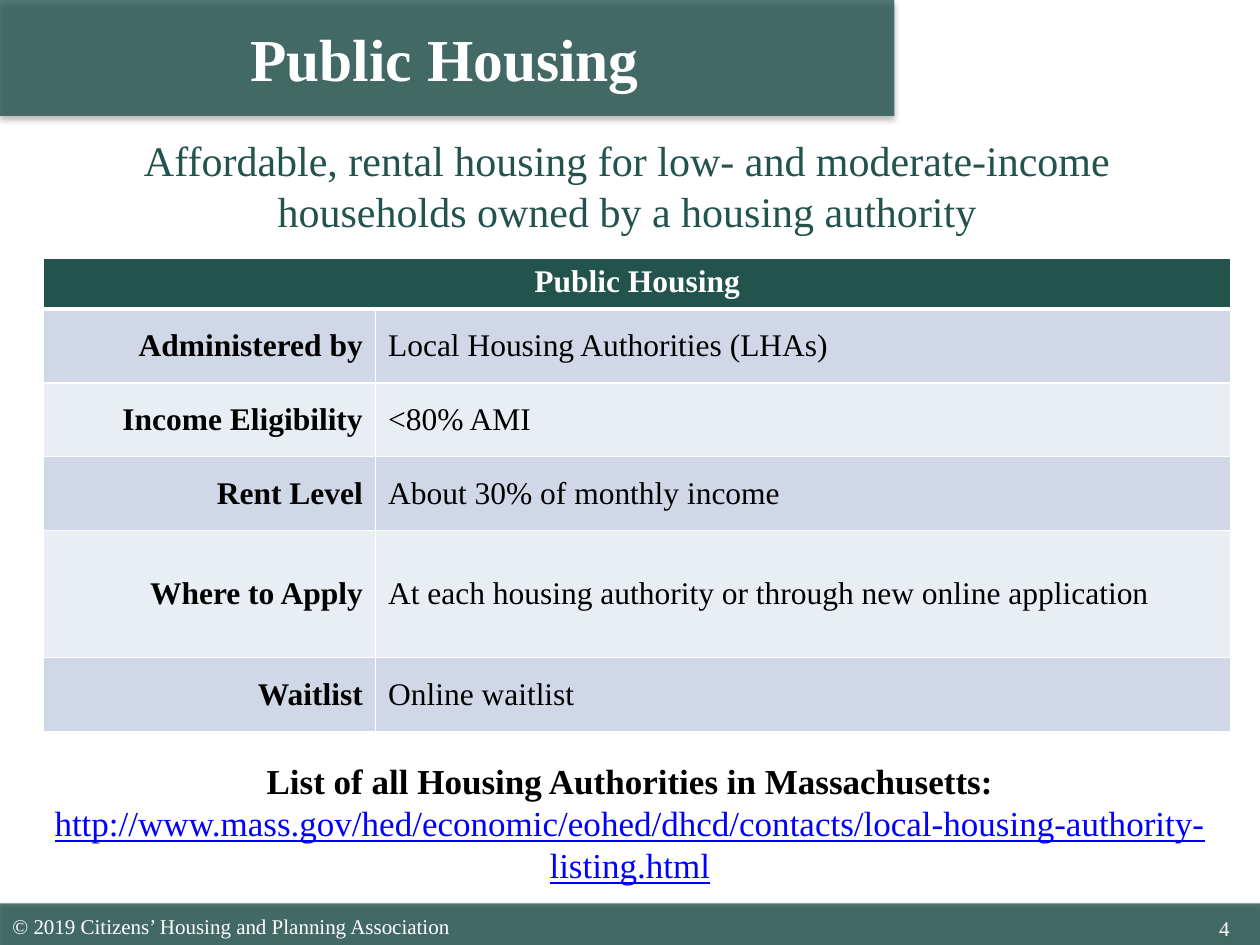
from lxml.etree import SubElement
from pptx import Presentation
from pptx.dml.color import RGBColor
from pptx.enum.shapes import MSO_SHAPE as Shape
from pptx.enum.text import MSO_ANCHOR as Anchor, PP_ALIGN as Align
from pptx.oxml.ns import qn
from pptx.util import Cm, Pt

FONT = "Times New Roman"
GREEN = RGBColor(0x22, 0x53, 0x4D)
WHITE = RGBColor(0xFF, 0xFF, 0xFF)
BLACK = RGBColor(0, 0, 0)
BLUE = RGBColor(0, 0, 0xFF)
BANDS = [RGBColor(0xD0, 0xD8, 0xE8), RGBColor(0xE9, 0xED, 0xF4)]

TITLE = "Public Housing"
SUBTITLE = ("Affordable, rental housing for low- and moderate-income "
            "households owned by a housing authority")
FACTS = [
    ("Administered by", "Local Housing Authorities (LHAs)"),
    ("Income Eligibility", "<80% AMI"),
    ("Rent Level", "About 30% of monthly income"),
    ("Where to Apply", "At each housing authority or through new online application"),
    ("Waitlist", "Online waitlist"),
]
LIST_LABEL = "List of all Housing Authorities in Massachusetts:"
LIST_ADDRESS = ("http://www.mass.gov/hed/economic/eohed/dhcd/contacts/"
                "local-housing-authority-listing.html")
COPYRIGHT = "© 2019 Citizens’ Housing and Planning Association"
PAGE_NUMBER = "4"

COLUMN_WIDTHS = [6.7, 17.25]
HEADER_HEIGHT, ROW_HEIGHT, TALL_ROW_HEIGHT = 0.98, 1.49, 2.56
TALL_ROW = 4


def add_shadow(properties):
    effects = properties.find(qn("a:effectLst"))
    if effects is None:
        effects = SubElement(properties, qn("a:effectLst"))
    shadow = SubElement(effects, qn("a:outerShdw"), blurRad=str(Pt(3.1)),
                        dist=str(Pt(1.8)), dir="5400000", rotWithShape="0")
    color = SubElement(shadow, qn("a:srgbClr"), val="000000")
    SubElement(color, qn("a:alpha"), val="35000")


def add_bar(page, top, width, height):
    bar = page.shapes.add_shape(Shape.RECTANGLE, 0, Cm(top), Cm(width), Cm(height))
    bar.shadow.inherit = False
    bar.fill.solid()
    bar.fill.fore_color.rgb = GREEN
    bar.line.fill.background()
    properties = bar.element.spPr
    color = properties.find(qn("a:solidFill")).find(qn("a:srgbClr"))
    SubElement(color, qn("a:alpha"), val="78000")
    add_shadow(properties)
    return bar


def set_insets(frame, left, right):
    frame.margin_left, frame.margin_right = Cm(left), Cm(right)
    frame.margin_top = frame.margin_bottom = 0


def add_box(page, left, top, width, height, anchor=Anchor.MIDDLE):
    box = page.shapes.add_textbox(Cm(left), Cm(top), Cm(width), Cm(height))
    frame = box.text_frame
    frame.word_wrap = True
    frame.vertical_anchor = anchor
    return frame


def write(para, text, size, color, align=Align.LEFT, bold=False, underline=False):
    span = para.add_run()
    span.text = text
    para.alignment = align
    font = para.font
    font.name, font.size, font.bold = FONT, Pt(size), bold
    font.underline = underline
    font.color.rgb = color
    return span


def style_cell(cell, fill, top=1, bottom=1):
    properties = cell._tc.get_or_add_tcPr()
    for side, width in (("L", 1), ("R", 1), ("T", top), ("B", bottom)):
        border = SubElement(properties, qn(f"a:ln{side}"), w=str(Pt(width)))
        paint = SubElement(border, qn("a:solidFill"))
        SubElement(paint, qn("a:srgbClr"), val=str(WHITE))
    cell.fill.solid()
    cell.fill.fore_color.rgb = fill


def add_facts(page):
    heights = [HEADER_HEIGHT] + [ROW_HEIGHT] * len(FACTS)
    heights[TALL_ROW] = TALL_ROW_HEIGHT
    table = page.shapes.add_table(len(heights), 2, Cm(0.87), Cm(5.21),
                                  Cm(sum(COLUMN_WIDTHS)), Cm(sum(heights))).table
    for column, width in zip(table.columns, COLUMN_WIDTHS):
        column.width = Cm(width)
    for row, height in zip(table.rows, heights):
        row.height = Cm(height)

    header = table.cell(0, 0)
    header.merge(table.cell(0, 1))
    for column in range(2):
        style_cell(table.cell(0, column), GREEN, bottom=3)
    write(header.text_frame.paragraphs[0], TITLE, 18, WHITE, Align.CENTER, bold=True)

    for index, fact in enumerate(FACTS, start=1):
        for column, text in enumerate(fact):
            cell = table.cell(index, column)
            style_cell(cell, BANDS[(index - 1) % 2], top=3 if index == 1 else 1)
            cell.vertical_anchor = Anchor.MIDDLE
            is_label = column == 0
            write(cell.text_frame.paragraphs[0], text, 18, BLACK,
                  Align.RIGHT if is_label else Align.LEFT, bold=is_label)


def main():
    deck = Presentation()
    deck.slide_width, deck.slide_height = Cm(25.4), Cm(19.05)
    page = deck.slides.add_slide(deck.slide_layouts[6])

    add_bar(page, 0, 18.03, 2.34)
    footer = add_bar(page, 18.21, 25.4, 0.84).text_frame
    set_insets(footer, 0.5, 0.61)
    footer.vertical_anchor = Anchor.TOP
    number = footer.paragraphs[0]
    write(number, PAGE_NUMBER, 12, WHITE, Align.RIGHT)
    number.line_spacing = 1.5

    notice = add_box(page, 0, 18.29, 18.31, 0.76)
    write(notice.paragraphs[0], COPYRIGHT, 12, WHITE)

    subtitle = add_box(page, 0.87, 2.26, 23.39, 2.95)
    set_insets(subtitle, 0.15, 0)
    write(subtitle.paragraphs[0], SUBTITLE, 24, GREEN, Align.CENTER)

    add_facts(page)

    title = add_box(page, 0, 0, 17.78, 2.31)
    set_insets(title, 0.15, 0)
    span = write(title.paragraphs[0], TITLE, 34, WHITE, Align.CENTER, bold=True)
    add_shadow(span._r.get_or_add_rPr())

    listing = add_box(page, 0, 15.19, 25.4, 2.82, Anchor.TOP)
    write(listing.paragraphs[0], LIST_LABEL, 20, BLACK, Align.CENTER, bold=True)
    write(listing.add_paragraph(), LIST_ADDRESS, 20, BLUE, Align.CENTER, underline=True)

    deck.save("out.pptx")


if __name__ == "__main__":
    main()
